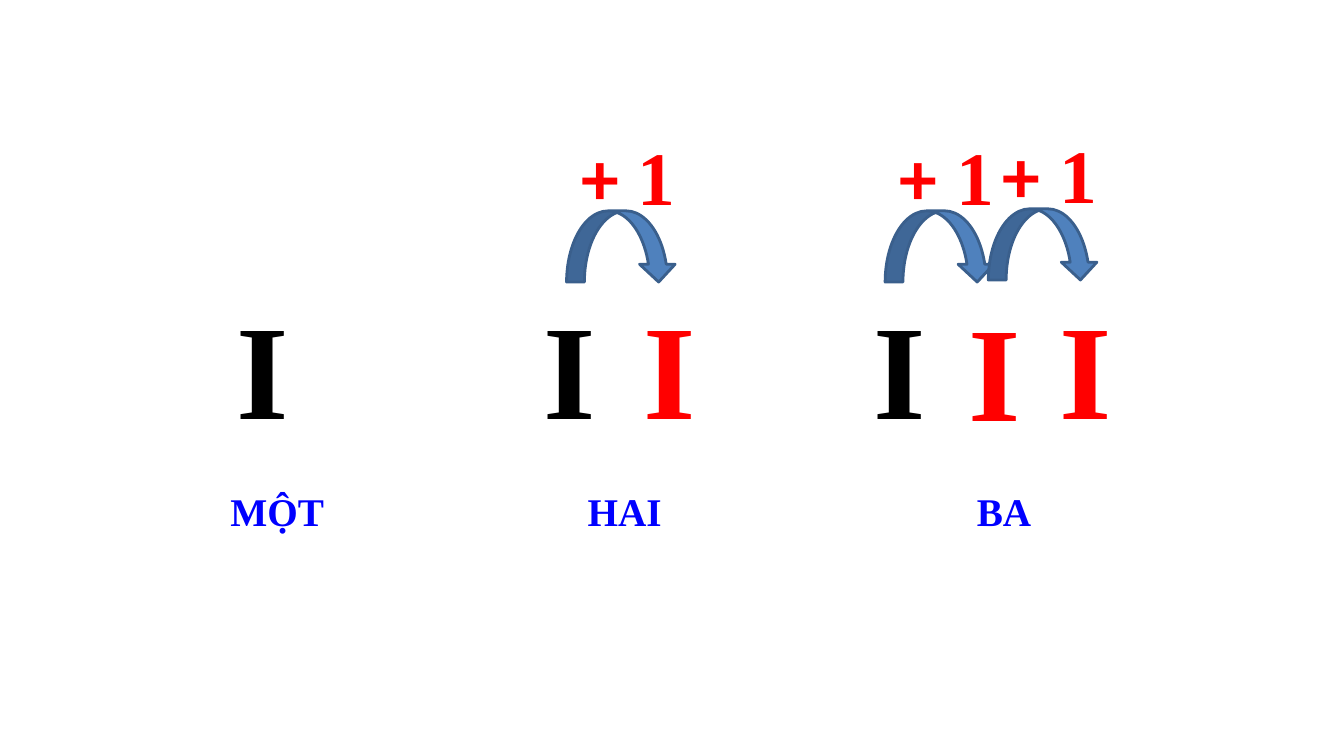
from dataclasses import dataclass

from pptx import Presentation
from pptx.dml.color import RGBColor
from pptx.enum.shapes import MSO_SHAPE
from pptx.enum.text import PP_ALIGN
from pptx.oxml.ns import qn
from pptx.slide import Slide
from pptx.util import Emu, Inches, Pt

COLOURS = {
    "first": "000000",
    "added": "FF0000",
    "word": "0000FF",
    "arrow": "4F81BD",
    "arrow_line": "3A5F8C",
}
SERIF = "Times New Roman"
SLIDE_WIDTH, SLIDE_HEIGHT = Inches(13.33), Inches(7.5)


@dataclass(frozen=True)
class Area:
    """Left and width in percent of the slide's width, top and height of its height."""
    left: float
    top: float
    width: float
    height: float

    def lengths(self) -> tuple[Emu, Emu, Emu, Emu]:
        return (Emu(int(SLIDE_WIDTH * self.left / 100)),
                Emu(int(SLIDE_HEIGHT * self.top / 100)),
                Emu(int(SLIDE_WIDTH * self.width / 100)),
                Emu(int(SLIDE_HEIGHT * self.height / 100)))


@dataclass(frozen=True)
class Stroke:
    centre: float
    colour: str = "added"
    top: float = 37.07


@dataclass(frozen=True)
class Hop:
    """An arrow to the next stroke, with its "+ 1" above."""
    centre: float
    middle: float = 32.6


@dataclass(frozen=True)
class Number:
    word: str
    word_left: float
    word_width: float
    word_align: PP_ALIGN
    strokes: tuple[Stroke, ...]
    hops: tuple[Hop, ...] = ()


NUMBERS = (
    Number("MỘT", 15.6, 10.05, PP_ALIGN.CENTER, (Stroke(19.58, "first"),)),
    Number("HAI", 42.98, 8, PP_ALIGN.LEFT,
           (Stroke(42.4, "first"), Stroke(49.8)), (Hop(46.25),)),
    Number("BA", 71.94, 8, PP_ALIGN.LEFT,
           (Stroke(66.92, "first"), Stroke(74.02, top=37.33), Stroke(80.75)),
           (Hop(69.95), Hop(77.63, 32.33))),
)


def add_text(page: Slide, area: Area, spans: tuple[tuple[str, str], ...],
             size: int, colour: str, align: PP_ALIGN) -> None:
    """Add one bold line; each span is a text and its font."""
    box = page.shapes.add_textbox(*area.lengths())
    box.text_frame.word_wrap = True
    para = box.text_frame.paragraphs[0]
    para.alignment = align
    for text, font in spans:
        span = para.add_run()
        span.text = text
        span.font.name = font
        span.font.size = Pt(size)
        span.font.bold = True
        span.font.color.rgb = RGBColor.from_string(COLOURS[colour])


def add_stroke(page: Slide, stroke: Stroke) -> None:
    width = 14
    area = Area(stroke.centre - width / 2, stroke.top, width, 22.93)
    add_text(page, area, (("I", SERIF),), 96, stroke.colour, PP_ALIGN.CENTER)


def add_hop(page: Slide, hop: Hop) -> None:
    width, height = 5.3, 14.53
    area = Area(hop.centre - width / 2, hop.middle - height / 2, width, height)
    arrow = page.shapes.add_shape(MSO_SHAPE.CURVED_RIGHT_ARROW, *area.lengths())
    arrow.rotation = 90
    arrow.element.spPr.find(qn("a:xfrm")).set("flipV", "1")
    arrow.shadow.inherit = False
    arrow.fill.solid()
    arrow.fill.fore_color.rgb = RGBColor.from_string(COLOURS["arrow"])
    arrow.line.color.rgb = RGBColor.from_string(COLOURS["arrow_line"])
    arrow.line.width = Pt(2)
    label = Area(hop.centre - 3.75, hop.middle - 16.07, 12, 13.47)
    add_text(page, label, (("+", "Calibri"), (" 1", SERIF)), 54, "added", PP_ALIGN.LEFT)


def add_number(page: Slide, number: Number) -> None:
    for stroke in number.strokes:
        add_stroke(page, stroke)
    for hop in number.hops:
        add_hop(page, hop)
    area = Area(number.word_left, 63.87, number.word_width, 7.6)
    add_text(page, area, ((number.word, SERIF),), 28, "word", number.word_align)


def main() -> None:
    deck = Presentation()
    deck.slide_width, deck.slide_height = SLIDE_WIDTH, SLIDE_HEIGHT
    page = deck.slides.add_slide(deck.slide_layouts[6])
    for number in NUMBERS:
        add_number(page, number)
    deck.save("out.pptx")


if __name__ == "__main__":
    main()
